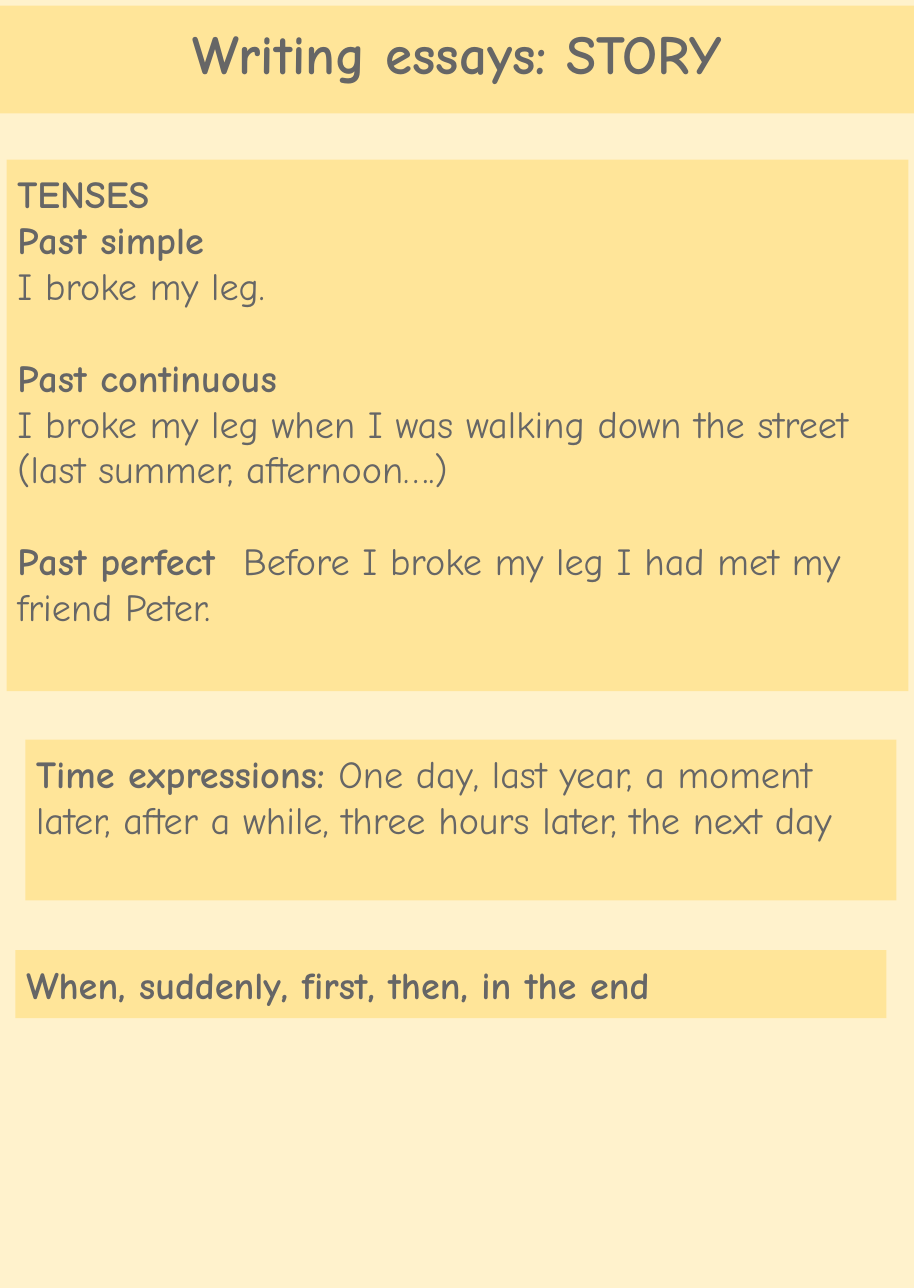
from lxml import etree
from pptx import Presentation
from pptx.dml.color import RGBColor
from pptx.enum.shapes import MSO_SHAPE
from pptx.enum.text import MSO_ANCHOR, MSO_AUTO_SIZE, PP_ALIGN
from pptx.oxml.ns import qn
from pptx.util import Inches, Pt

CREAM = RGBColor(0xFF, 0xF2, 0xCC)
YELLOW = RGBColor(0xFF, 0xE5, 0x99)
GREY = RGBColor(0x66, 0x66, 0x66)
FONT = "Comic Neue"
RECTANGLE = MSO_SHAPE.RECTANGLE
TOP = MSO_ANCHOR.TOP
FIXED_SIZE = MSO_AUTO_SIZE.NONE
LEFT, CENTER = PP_ALIGN.LEFT, PP_ALIGN.CENTER

TITLE_ONLY = 5
BODY_SIZE = 25
LINE_GAP = Pt(30)
EXAMPLE_TAB = Inches(2.05)

# Each section lists paragraphs; each paragraph lists (words, bold) runs.
TENSES = [
    [
        [("TENSES", True)],
        [("Past simple", True)],
        [("I broke my leg.", False)],
    ],
    [
        [("Past continuous", True)],
        [("I broke my leg when I was walking down the street "
          "(last summer, afternoon….)", False)],
    ],
    [
        [("Past perfect\t", True),
         ("Before I broke my leg I had met my friend Peter.", False)],
    ],
]
TIME_EXPRESSIONS = [[[
    ("Time expressions: ", True),
    ("One day, last year, a moment later, after a while, "
     "three hours later, the next day", False),
]]]
LINKING_WORDS = [[[("When, suddenly, first, then, in the end", True)]]]


def style_panel(panel, inset):
    """Give a panel its yellow fill and a fixed, top-anchored text frame."""
    panel.fill.solid()
    panel.fill.fore_color.rgb = YELLOW
    frame = panel.text_frame
    frame.word_wrap = True
    frame.auto_size = FIXED_SIZE
    frame.vertical_anchor = TOP
    frame.margin_left = frame.margin_right = Inches(inset)
    frame.margin_top = frame.margin_bottom = Inches(inset)
    return frame


def add_words(paragraph, words, size, bold):
    run = paragraph.add_run()
    run.text = words
    run.font.name = FONT
    run.font.size = Pt(size)
    run.font.bold = bold
    run.font.color.rgb = GREY


def add_tab_stop(paragraph, position):
    tabs = etree.SubElement(paragraph._p.get_or_add_pPr(), qn("a:tabLst"))
    etree.SubElement(tabs, qn("a:tab"), pos=str(position), algn="l")


def add_title(slide, left, top, width, height, words):
    title = slide.shapes.title
    title.left, title.top = Inches(left), Inches(top)
    title.width, title.height = Inches(width), Inches(height)
    heading = style_panel(title, 0.13).paragraphs[0]
    heading.alignment = CENTER
    add_words(heading, words, 36, True)


def add_panel(slide, left, top, width, height, sections):
    """Add a text panel whose sections are set one line apart."""
    panel = slide.shapes.add_shape(
        RECTANGLE, Inches(left), Inches(top), Inches(width), Inches(height))
    panel.shadow.inherit = False
    panel.line.fill.background()
    frame = style_panel(panel, 0.1)
    paragraph = frame.paragraphs[0]
    for section_index, section in enumerate(sections):
        for line_index, runs in enumerate(section):
            if section_index or line_index:
                paragraph = frame.add_paragraph()
            paragraph.alignment = LEFT
            if section_index and not line_index:
                paragraph.space_before = LINE_GAP
            if any("\t" in words for words, _ in runs):
                add_tab_stop(paragraph, EXAMPLE_TAB)
            for words, bold in runs:
                add_words(paragraph, words, BODY_SIZE, bold)


def main():
    prs = Presentation()
    prs.slide_width, prs.slide_height = Inches(8.3), Inches(11.7)
    slide = prs.slides.add_slide(prs.slide_layouts[TITLE_ONLY])
    slide.background.fill.solid()
    slide.background.fill.fore_color.rgb = CREAM

    add_title(slide, 0, 0.05, 8.3, 0.98, "Writing essays: STORY")
    add_panel(slide, 0.06, 1.45, 8.19, 4.83, TENSES)
    add_panel(slide, 0.23, 6.72, 7.91, 1.46, TIME_EXPRESSIONS)
    add_panel(slide, 0.14, 8.63, 7.91, 0.62, LINKING_WORDS)
    prs.save("out.pptx")


if __name__ == "__main__":
    main()
